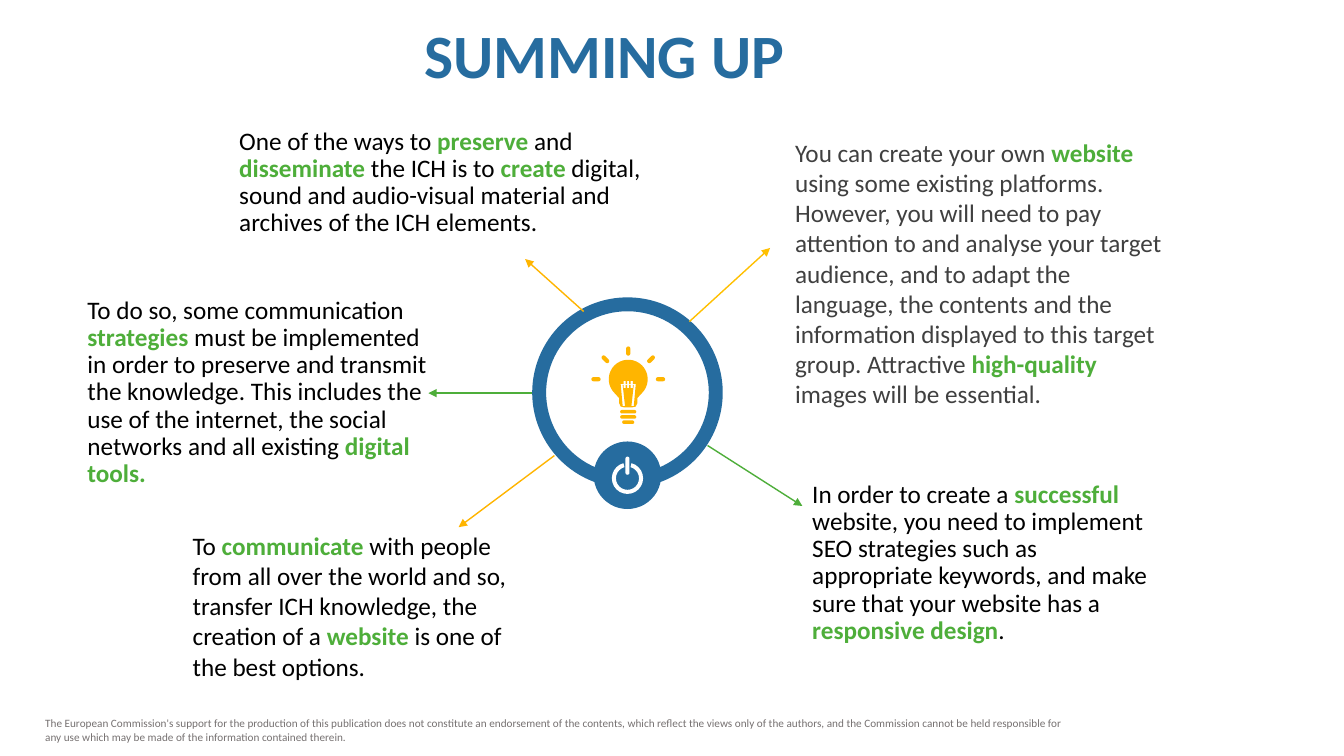
from math import cos, radians, sin

from lxml.etree import SubElement
from pptx import Presentation
from pptx.dml.color import RGBColor
from pptx.enum.shapes import MSO_CONNECTOR, MSO_SHAPE
from pptx.enum.text import MSO_ANCHOR
from pptx.oxml.ns import qn
from pptx.util import Inches, Pt

BLUE = RGBColor(0x26, 0x6C, 0x9F)
GREEN = RGBColor(0x4E, 0xAE, 0x3A)
YELLOW = RGBColor(0xFF, 0xB5, 0x00)
AMBER = RGBColor(0xFF, 0xC0, 0x00)
BLACK = RGBColor(0x00, 0x00, 0x00)
CHARCOAL = RGBColor(0x40, 0x40, 0x40)
GREY = RGBColor(0x76, 0x71, 0x71)
WHITE = RGBColor(0xFF, 0xFF, 0xFF)

# The slide is a grid of 160 columns by 90 rows of square cells
CELL = Inches(1 / 12)

presentation = Presentation()
presentation.slide_width = 160 * CELL
presentation.slide_height = 90 * CELL
slide = presentation.slides.add_slide(presentation.slide_layouts[6])


def add_text(text, box, size=18, color=BLACK, bold=False, spacing=None,
             anchor=MSO_ANCHOR.MIDDLE):
    """Add a text box; words between asterisks become bold and green."""
    shape = slide.shapes.add_textbox(*[int(cells * CELL) for cells in box])
    frame = shape.text_frame
    frame.word_wrap = True
    frame.vertical_anchor = anchor
    paragraph = frame.paragraphs[0]
    paragraph.line_spacing = spacing
    for index, part in enumerate(text.split("*")):
        if part:
            highlighted = index % 2 == 1
            run = paragraph.add_run()
            run.text = part
            run.font.name = "Calibri"
            run.font.size = Pt(size)
            run.font.bold = bold or highlighted
            run.font.color.rgb = GREEN if highlighted else color


def add_solid(kind, center_x, center_y, width, height, color):
    """Add a filled shape without outline around its centre."""
    box = (center_x - width / 2, center_y - height / 2, width, height)
    shape = slide.shapes.add_shape(kind, *[int(cells * CELL) for cells in box])
    shape.shadow.inherit = False
    shape.fill.solid()
    shape.fill.fore_color.rgb = color
    shape.line.fill.background()
    return shape


# Title and footer
add_text("SUMMING UP", (49.32, 2.4, 45.6, 9.48), size=44, color=BLUE,
         bold=True, spacing=0.9, anchor=MSO_ANCHOR.TOP)
add_text("The European Commission's support for the production of this "
         "publication does not constitute an endorsement of the contents, "
         "which reflect the views only of the authors, and the Commission "
         "cannot be held responsible for any use which may be made of the "
         "information contained therein.",
         (4.2, 84.72, 125.52, 4.44), size=8, color=GREY, anchor=MSO_ANCHOR.TOP)

# Ring with the power button
HUB_X = 74.7
ring = add_solid(MSO_SHAPE.DONUT, HUB_X, 46.74, 22.68, 22.68, BLUE)
ring.adjustments[0] = 0.073
add_solid(MSO_SHAPE.OVAL, HUB_X, 56.58, 8.04, 8.04, BLUE)
power_arc = add_solid(MSO_SHAPE.BLOCK_ARC, HUB_X, 56.94, 3.72, 3.72, WHITE)
for index, value in enumerate((285 * 0.6, 255 * 0.6, 0.13)):
    power_arc.adjustments[index] = value
power_bar = add_solid(MSO_SHAPE.ROUNDED_RECTANGLE, HUB_X, 55.44, 0.48, 2.16,
                      WHITE)
power_bar.adjustments[0] = 0.5

# Light bulb: outline of glass and neck
BULB_X, BULB_Y, BULB_RADIUS = 74.8, 45.15, 2.32
glass = [(BULB_X + BULB_RADIUS * cos(radians(angle)),
          BULB_Y + BULB_RADIUS * sin(radians(angle)))
         for angle in range(135, 406, 10)]
neck = [(BULB_X + offset, y) for offset, y in (
    (1.08, 47.4), (1.08, 48), (0.9, 48.4), (0.5, 48.5),
    (-0.5, 48.5), (-0.9, 48.4), (-1.08, 48), (-1.08, 47.4))]

# Filament: an opening with two legs and three prongs
PRONGS = (-0.42, 0, 0.42)
upper_edge = [(prong + side, y) for prong in PRONGS for side, y in (
    (-0.12, 45.72), (-0.12, 45.36), (0.12, 45.36), (0.12, 45.72))]
lower_edge = [(prong + side, y) for prong in reversed(PRONGS) for side, y in (
    (0.12, 45.84), (0.12, 46.2), (-0.12, 46.2), (-0.12, 45.84))]
right_leg = [(0.9, 45.72), (0.66, 48.36), (0.38, 48.36), (0.66, 45.84)]
left_leg = [(-0.66, 45.84), (-0.38, 48.36), (-0.66, 48.36), (-0.9, 45.72)]
filament = [(BULB_X + offset, y)
            for offset, y in upper_edge + right_leg + lower_edge + left_leg]

# Rays from left over the top to right, and the threads of the base
capsules = [(BULB_X + 3.84 * cos(radians(angle)),
             BULB_Y + 3.35 * sin(radians(angle)), 1.1, 0.5, angle)
            for angle in range(180, 361, 45)]
capsules += [(BULB_X, 49.02 + 0.62 * index, width, 0.42, 0)
             for index, width in enumerate((1.92, 1.92, 1.44))]
contours = [glass + neck, filament]
for center_x, center_y, length, thickness, angle in capsules:
    turn_x, turn_y = cos(radians(angle)), sin(radians(angle))
    contour = []
    for end in (1, -1):
        for step in range(-90, 91, 30):
            along = end * ((length - thickness) / 2
                           + thickness / 2 * cos(radians(step)))
            across = end * thickness / 2 * sin(radians(step))
            contour.append((center_x + along * turn_x - across * turn_y,
                            center_y + along * turn_y + across * turn_x))
    contours.append(contour)

# Draw the bulb as one outline, in hundredths of a cell
builder = None
for contour in contours:
    points = [(100 * x, 100 * y) for x, y in contour]
    if builder is None:
        builder = slide.shapes.build_freeform(*points[0], scale=CELL / 100)
    else:
        builder.move_to(*points[0])
    builder.add_line_segments(points[1:], close=True)
bulb = builder.convert_to_shape()
bulb.shadow.inherit = False
bulb.fill.solid()
bulb.fill.fore_color.rgb = YELLOW
bulb.line.fill.background()

# Arrows from the ring to the texts
ARROWS = (
    ((63.36, 46.8, 51, 46.8), GREEN),
    ((84.24, 53.04, 95.52, 60.24), GREEN),
    ((69.48, 37.08, 62.52, 30.84), YELLOW),
    ((82.08, 38.28, 91.68, 29.52), AMBER),
    ((66, 54.24, 54.6, 62.76), YELLOW),
)
for ends, color in ARROWS:
    arrow = slide.shapes.add_connector(
        MSO_CONNECTOR.STRAIGHT, *[int(cells * CELL) for cells in ends])
    arrow.line.color.rgb = color
    arrow.line.width = Pt(1)
    SubElement(arrow.line._get_or_add_ln(), qn("a:tailEnd"), type="triangle")
    SubElement(arrow._element.spPr, qn("a:effectLst"))

# Texts around the ring
add_text("To *communicate* with people from all over the world and so, "
         "transfer ICH knowledge, the creation of a *website* is one of the "
         "best options.", (21.76, 62.36, 41.28, 19.44))
add_text("You can create your own *website* using some existing platforms. "
         "However, you will need to pay attention to and analyse your target "
         "audience, and to adapt the language, the contents and the "
         "information displayed to this target group. Attractive "
         "*high-quality* images will be essential.",
         (93.48, 15.52, 46.08, 33.96), color=CHARCOAL)
add_text("In order to create a *successful* website, you need to implement "
         "SEO strategies such as appropriate keywords, and make sure that "
         "your website has a *responsive design*.",
         (95.52, 56.7, 42.72, 20.64), spacing=0.9)
add_text("One of the ways to *preserve* and *disseminate* the ICH is to "
         "*create* digital, sound and audio-visual material and archives of "
         "the ICH elements.", (27.3, 14.64, 51.12, 14.28), spacing=0.9)
add_text("To do so, some communication *strategies* must be implemented in "
         "order to preserve and transmit the knowledge. This includes the use "
         "of the internet, the social networks and all existing "
         "*digital tools.*", (9.22, 34.7, 43.08, 24.12), spacing=0.9)

presentation.save("out.pptx")
